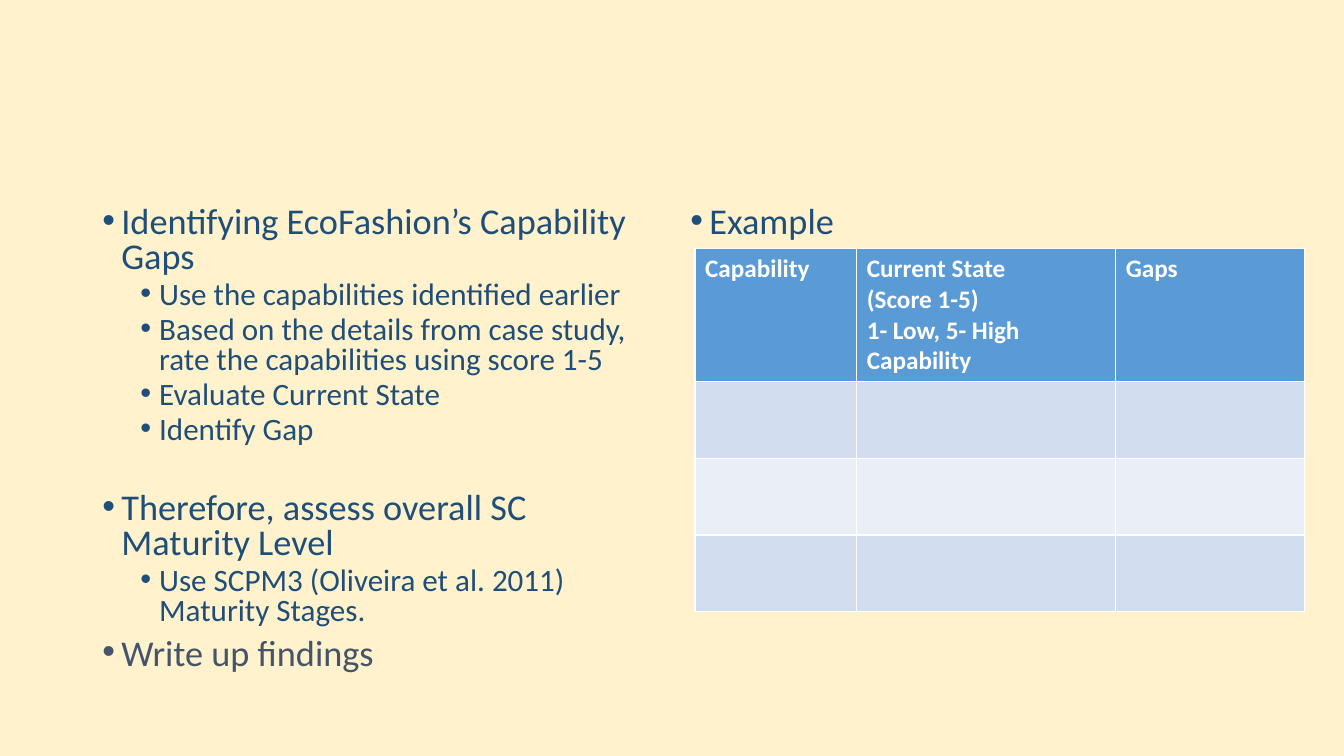
from lxml import etree
from pptx import Presentation
from pptx.dml.color import RGBColor
from pptx.enum import text
from pptx.oxml import ns
from pptx.util import Pt

CREAM = RGBColor(0xFF, 0xF2, 0xCC)
NAVY = RGBColor(0x1F, 0x4E, 0x79)
SLATE = RGBColor(0x44, 0x54, 0x6A)
WHITE = RGBColor(0xFF, 0xFF, 0xFF)
BLUE = RGBColor(0x5B, 0x9B, 0xD5)
BANDS = RGBColor(0xD2, 0xDE, 0xEF), RGBColor(0xEA, 0xEF, 0xF7)

# Size, space before and left indent by list level
LEVELS = (25.9, 7.5, 13.5), (22.2, 3.8, 40.5)
HANG = 13.5

STEPS = [
    (0, "Identifying EcoFashion’s Capability Gaps", {}),
    (1, "Use the capabilities identified earlier", {}),
    (1, "Based on the details from case study, rate the capabilities "
        "using score 1-5", {}),
    (1, "Evaluate Current State", {}),
    (1, "Identify Gap", {}),
    (0, "Therefore, assess overall SC Maturity Level", {"gap": 25.5}),
    (1, "Use SCPM3 (Oliveira et al. 2011) Maturity Stages.", {}),
    (0, "Write up findings", {"color": SLATE}),
]
HEADS = ["Capability"], ["Current State", "(Score 1-5)",
                         "1- Low, 5- High Capability"], ["Gaps"]


def write(para, words, size=18, color=NAVY, bold=False):
    run = para.add_run()
    run.text = words
    font = run.font
    font.name, font.size, font.bold = "Calibri", Pt(size), bold
    font.color.rgb = color


def place(shape, box):
    shape.left, shape.top, shape.width, shape.height = map(Pt, box)


def next_para(frame, index):
    return frame.add_paragraph() if index else frame.paragraphs[0]


def add_bullet(para, indent):
    props = para._p.get_or_add_pPr()
    props.set("marL", str(Pt(indent)))
    props.set("indent", str(Pt(-HANG)))
    etree.SubElement(props, ns.qn("a:buFont")).set("typeface", "Arial")
    etree.SubElement(props, ns.qn("a:buChar")).set("char", "•")


def fill_list(holder, box, items):
    place(holder, box)
    frame = holder.text_frame
    frame.word_wrap = True
    frame.auto_size = text.MSO_AUTO_SIZE.NONE
    for i, (level, words, style) in enumerate(items):
        size, before, indent = LEVELS[level]
        para = next_para(frame, i)
        para.level = level
        para.line_spacing = 0.8
        para.space_before = Pt(before + style.get("gap", 0))
        add_bullet(para, indent)
        write(para, words, size=size, color=style.get("color", NAVY))


def add_grid(slide, box, widths, rows=4):
    grid = slide.shapes.add_table(rows, len(widths), *map(Pt, box)).table
    for col, width in zip(grid.columns, widths):
        col.width = Pt(width)
    for r in range(rows):
        for cell in grid.rows[r].cells:
            cell.fill.solid()
            cell.fill.fore_color.rgb = BANDS[(r - 1) % 2] if r else BLUE
    for cell, lines in zip(grid.rows[0].cells, HEADS):
        for i, line in enumerate(lines):
            write(next_para(cell.text_frame, i), line, color=WHITE, bold=True)


def build_slide(deck):
    slide = deck.slides.add_slide(deck.slide_layouts[3])
    slide.background.fill.solid()
    slide.background.fill.fore_color.rgb = CREAM
    title, left, right = slide.placeholders
    title.element.getparent().remove(title.element)
    fill_list(left, (66, 144, 408, 358.5), STEPS)
    fill_list(right, (486, 144, 408, 342.5), [(0, "Example", {})])
    add_grid(slide, (496.5, 177.5, 435.5, 219), (115.5, 185, 135))


def main():
    deck = Presentation()
    deck.slide_width, deck.slide_height = Pt(960), Pt(540)
    build_slide(deck)
    deck.save("out.pptx")


if __name__ == "__main__":
    main()
